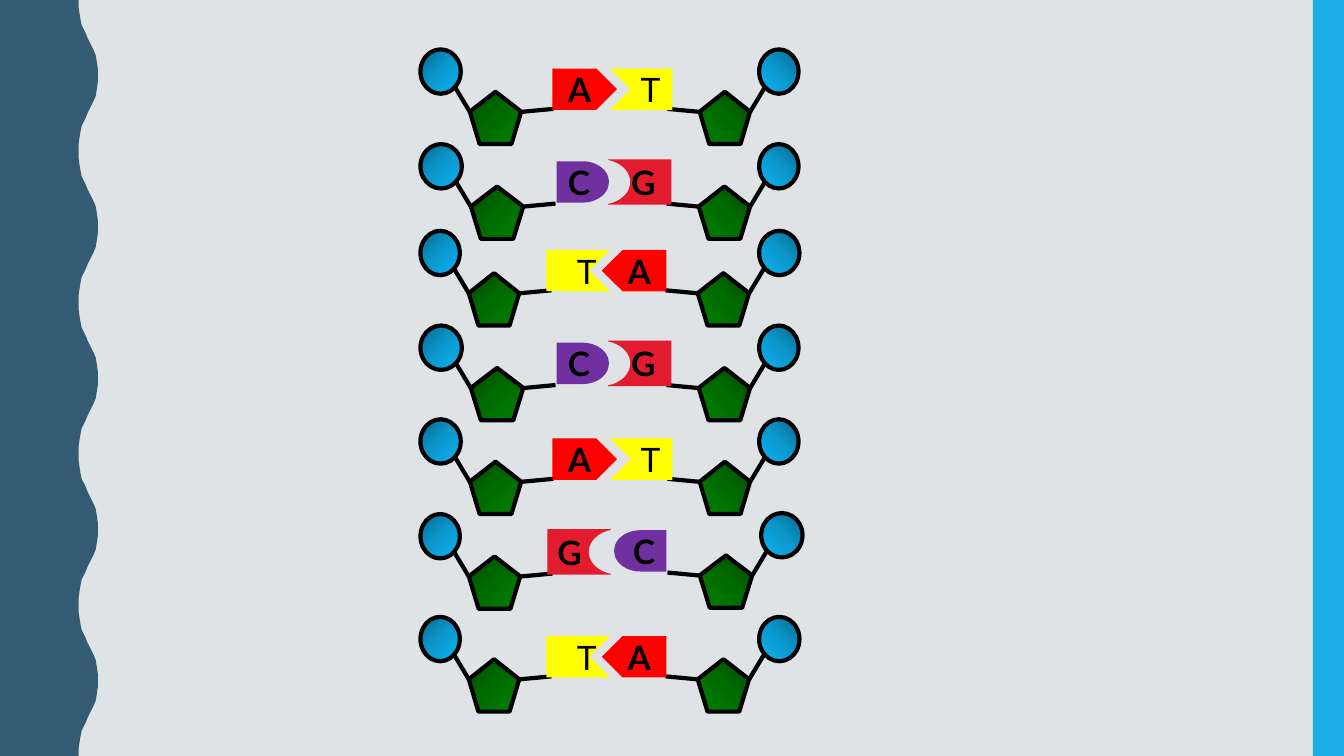
from copy import deepcopy

from lxml import etree
from pptx import Presentation
from pptx.dml.color import RGBColor
from pptx.enum.shapes import MSO_CONNECTOR, MSO_SHAPE
from pptx.enum.text import MSO_ANCHOR, PP_ALIGN
from pptx.oxml.ns import qn
from pptx.util import Inches, Pt

STRAIGHT = MSO_CONNECTOR.STRAIGHT
RECT, CIRCLE = MSO_SHAPE.RECTANGLE, MSO_SHAPE.OVAL
SUGAR = MSO_SHAPE.REGULAR_PENTAGON
TAG, CHEVRON, DELAY = MSO_SHAPE.PENTAGON, MSO_SHAPE.CHEVRON, MSO_SHAPE.FLOWCHART_DELAY
MIDDLE, CENTER, LEFT = MSO_ANCHOR.MIDDLE, PP_ALIGN.CENTER, PP_ALIGN.LEFT

BACKGROUND = RGBColor(0xDF, 0xE3, 0xE5)
NAVY = RGBColor(0x33, 0x5B, 0x74)
SKY = RGBColor(0x1C, 0xAD, 0xE4)
BLACK = RGBColor(0, 0, 0)
RED = RGBColor(0xFF, 0, 0)
YELLOW = RGBColor(0xFF, 0xFF, 0)
PURPLE = RGBColor(0x70, 0x30, 0xA0)
CRIMSON = RGBColor(0xE3, 0x1B, 0x2E)
BLUES = [RGBColor(0x08, 0x6A, 0x90), RGBColor(0x0B, 0x98, 0xCD), RGBColor(0x0D, 0xB4, 0xF3)]
GREENS = [RGBColor(0, 0x4C, 0), RGBColor(0, 0x6C, 0), RGBColor(0, 0x80, 0)]

# Base pairs: left base, right base, top of left and right half
PAIRS = [("A", "T", 0.49, 0.49), ("C", "G", 1.43, 1.43), ("T", "A", 2.29, 2.29),
         ("C", "G", 3.23, 3.23), ("A", "T", 4.16, 4.16), ("G", "C", 5.1, 5.09),
         ("T", "A", 6.12, 6.12)]

# Phosphate left and width, sugar left and width, base left and width
LEFT_HALVES = {"A": (4.17, 0.4, 4.66, 0.51, 5.48, 0.64),
               "C": (4.17, 0.41, 4.67, 0.52, 5.52, 0.52),
               "T": (4.17, 0.39, 4.65, 0.5, 5.42, 0.63),
               "G": (4.17, 0.39, 4.65, 0.51, 5.43, 0.63)}
RIGHT_HALVES = {"A": (7.53, 0.4, 6.92, 0.51, 5.97, 0.64),
                "C": (7.55, 0.41, 6.94, 0.52, 6.09, 0.52),
                "T": (7.53, 0.39, 6.94, 0.5, 6.05, 0.62),
                "G": (7.53, 0.39, 6.93, 0.51, 6.03, 0.63)}

# Shape, colour, drop below the phosphate top, height
BASES = {"A": (TAG, RED, 0.19, 0.41), "C": (DELAY, PURPLE, 0.17, 0.41),
         "T": (CHEVRON, YELLOW, 0.19, 0.41), "G": (RECT, CRIMSON, 0.15, 0.45)}

# Half a wave, from trough to crest
HALF_WAVE = [(0.78, 0), (0.78, 0.07), (0.79, 0.14), (0.8, 0.2), (0.81, 0.25),
             (0.83, 0.29), (0.85, 0.33), (0.87, 0.38), (0.89, 0.42), (0.91, 0.46),
             (0.93, 0.5), (0.95, 0.55), (0.96, 0.61), (0.97, 0.68), (0.97, 0.75)]
WAVE_LENGTH, WAVES = 1.5, 5


def add_filled(shapes, kind, x, y, w, h, color, flip=False):
    sp = shapes.add_shape(kind, Inches(x), Inches(y), Inches(w), Inches(h))
    sp.shadow.inherit = False
    sp.fill.solid()
    sp.fill.fore_color.rgb = color
    sp.line.fill.background()
    if flip:
        sp._element.spPr.find(qn("a:xfrm")).set("flipH", "1")
    return sp


def add_outlined(shapes, kind, x, y, w, h, colors, flip):
    sp = add_filled(shapes, kind, x, y, w, h, colors[0], flip)
    sp.fill.gradient()
    sp.fill.gradient_angle = 315
    stops = sp._element.spPr.find(qn("a:gradFill")).find(qn("a:gsLst"))
    stops.insert(1, deepcopy(stops[0]))
    for stop, position, color in zip(sp.fill.gradient_stops, (0, 0.5, 1), colors):
        stop.position = position
        stop.color.rgb = color
    sp.line.color.rgb = BLACK
    sp.line.width = Pt(3)


def add_bond(shapes, x1, y1, x2, y2):
    line = shapes.add_connector(STRAIGHT, Inches(x1), Inches(y1), Inches(x2), Inches(y2))
    line.line.color.rgb = BLACK
    line.line.width = Pt(3)
    etree.SubElement(line._element.spPr, qn("a:effectLst"))


def add_letter(sp, letter, align):
    tf = sp.text_frame
    tf.word_wrap = True
    tf.vertical_anchor = MIDDLE
    p = tf.paragraphs[0]
    p.text = letter
    p.alignment = align
    font = p.runs[0].font
    font.name, font.size, font.bold = "Lato", Pt(24), letter != "T"
    font.color.rgb = BLACK


def add_base(shapes, letter, x, top, w, right):
    kind, color, drop, h = BASES[letter]
    y = top + drop
    if letter == "T":
        add_filled(shapes, RECT, x + w - 0.29 if right else x, y, 0.29, h, color)
    flip = right != (letter == "T")
    sp = add_filled(shapes, kind, x, y, w, h, color, flip)
    add_letter(sp, letter, LEFT if letter == "G" else CENTER)
    if letter == "G":
        if right:
            sp.text_frame.margin_left = Inches(0.23)
        # Rounded notch that receives C
        add_filled(shapes, DELAY, 5.66 if right else 5.84, y, 0.59, h, BACKGROUND, not right)


def add_nucleotide(shapes, letter, top, right):
    halves = RIGHT_HALVES if right else LEFT_HALVES
    phosphate_x, phosphate_w, sugar_x, sugar_w, base_x, base_w = halves[letter]
    add_outlined(shapes, CIRCLE, phosphate_x, top, phosphate_w, 0.44, BLUES, right)
    add_outlined(shapes, SUGAR, sugar_x, top + 0.42, sugar_w, 0.52, GREENS, right)
    outer, inner, inward = sugar_x, sugar_x + sugar_w, 1
    if right:
        outer, inner, inward = inner, outer, -1
    add_bond(shapes, outer, top + 0.62, outer - inward * 0.15, top + 0.37)
    add_bond(shapes, inner, top + 0.62, inner + inward * 0.32, top + 0.59)
    add_base(shapes, letter, base_x, top, base_w, right)


def add_strand(s, nucleotides, right):
    group = s.shapes.add_group_shape()
    for letter, top in nucleotides:
        add_nucleotide(group.shapes, letter, top, right)


def add_wave(s):
    period = HALF_WAVE + [(x, WAVE_LENGTH - y) for x, y in reversed(HALF_WAVE[:-1])]
    points = [(Inches(x), Inches(y + i * WAVE_LENGTH))
              for i in range(WAVES) for x, y in period]
    builder = s.shapes.build_freeform(0, 0)
    builder.add_line_segments(points + [(0, Inches(7.5))], close=True)
    sp = builder.convert_to_shape()
    sp.shadow.inherit = False
    sp.fill.solid()
    sp.fill.fore_color.rgb = NAVY
    sp.line.fill.background()


def main():
    prs = Presentation()
    prs.slide_width, prs.slide_height = Inches(13.33), Inches(7.5)
    s = prs.slides.add_slide(prs.slide_layouts[6])

    # Background and side bands
    s.background.fill.solid()
    s.background.fill.fore_color.rgb = BACKGROUND
    add_wave(s)
    add_filled(s.shapes, RECT, 13.02, 0, 0.31, 7.5, SKY)

    # Strands; a right-hand C goes last, over the notch of its G
    right = [(letter, top) for _, letter, _, top in PAIRS]
    add_strand(s, [n for n in right if n[0] != "C"], True)
    add_strand(s, [(letter, top) for letter, _, top, _ in PAIRS], False)
    add_strand(s, [n for n in right if n[0] == "C"], True)

    prs.save("out.pptx")


if __name__ == "__main__":
    main()
